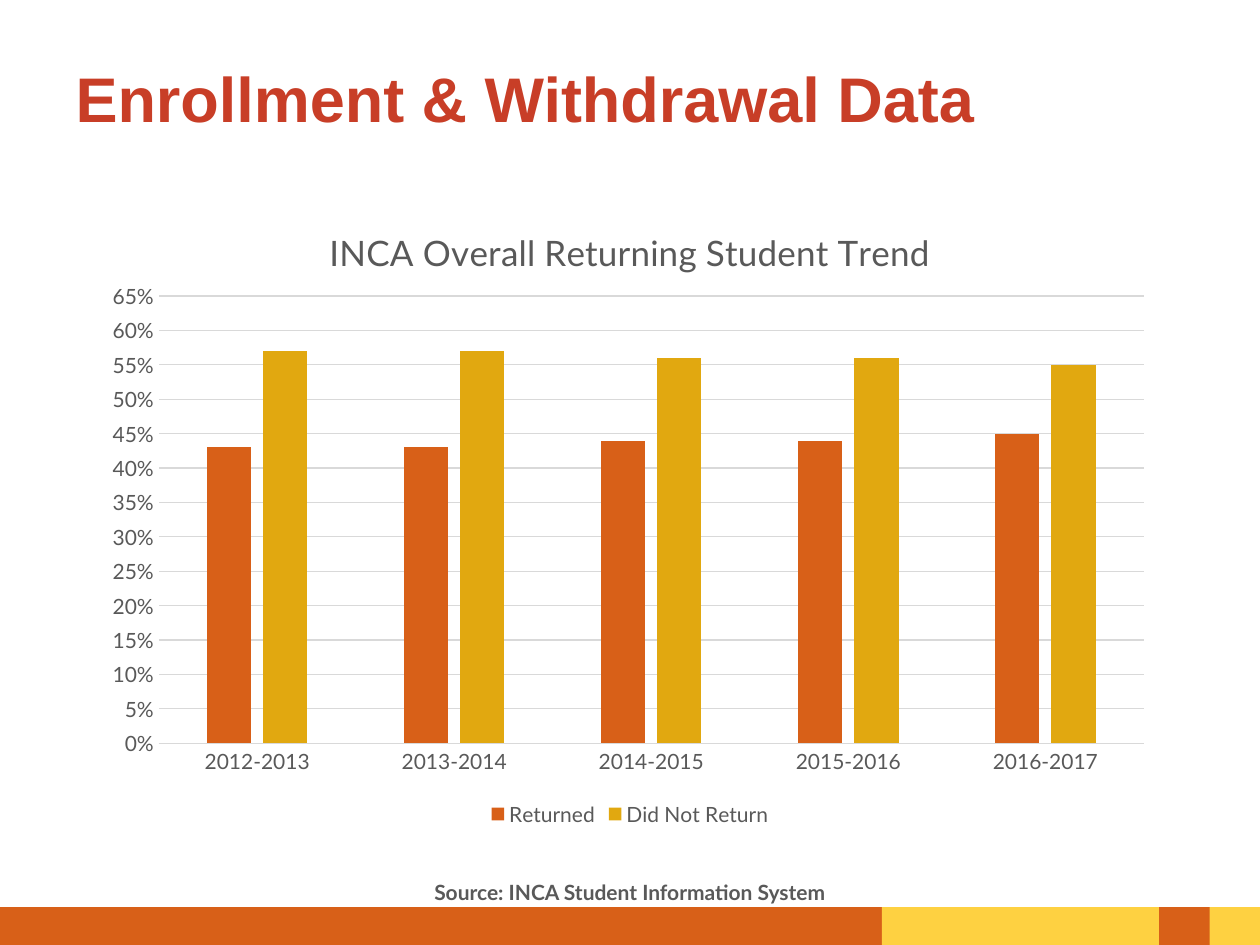
from pptx import Presentation
from pptx.chart.data import CategoryChartData
from pptx.dml.color import RGBColor
from pptx.enum.chart import XL_CHART_TYPE, XL_LEGEND_POSITION, XL_TICK_MARK
from pptx.enum.shapes import MSO_SHAPE
from pptx.enum.text import MSO_ANCHOR, MSO_AUTO_SIZE, PP_ALIGN
from pptx.oxml import parse_xml
from pptx.oxml.ns import nsdecls
from pptx.util import Inches, Pt

COLORS = {"orange": "D86018", "yellow": "FED141", "gold": "E1A810",
          "red": "C83E27", "text": "595959", "line": "D9D9D9"}
TITLE = "Enrollment & Withdrawal Data"
CHART_TITLE = "INCA Overall Returning Student Trend"
SOURCE = "Source: INCA Student Information System"
YEARS = ["2012-2013", "2013-2014", "2014-2015", "2015-2016", "2016-2017"]
SERIES = [
    ("Returned", [0.43, 0.43, 0.44, 0.44, 0.45], "orange"),
    ("Did Not Return", [0.57, 0.57, 0.56, 0.56, 0.55], "gold"),
]
BANDS = [(0, 7, "orange"), (7, 3, "yellow"), (9.2, 0.4, "orange")]
PLOT = {"x": 0.06, "y": 0.15, "w": 0.92, "h": 0.71}


def rgb(name):
    return RGBColor.from_string(COLORS[name])


def set_font(font, size=12, color="text", name="Lato", bold=False):
    font.size = Pt(size)
    font.name = name
    font.bold = bold
    font.color.rgb = rgb(color)


def set_text(tf, text, align=PP_ALIGN.LEFT, anchor=MSO_ANCHOR.MIDDLE, pad=0, **fmt):
    tf.word_wrap = True
    tf.auto_size = MSO_AUTO_SIZE.NONE
    tf.vertical_anchor = anchor
    tf.margin_left = tf.margin_right = Inches(0.1)
    tf.margin_top = tf.margin_bottom = Inches(pad)
    p = tf.paragraphs[0]
    p.alignment = align
    r = p.add_run()
    r.text = text
    set_font(r.font, **fmt)


def set_line(line, color):
    line.color.rgb = rgb(color)
    line.width = Pt(0.75)


def add_bands(s):
    for left, width, color in BANDS:
        sp = s.shapes.add_shape(MSO_SHAPE.RECTANGLE, Inches(left), Inches(7.2),
                                Inches(width), Inches(0.3))
        sp.shadow.inherit = False
        sp.fill.solid()
        sp.fill.fore_color.rgb = rgb(color)
        sp.line.fill.background()


def add_trend_chart(s):
    data = CategoryChartData(number_format="0%")
    data.categories = YEARS
    for name, values, color in SERIES:
        data.add_series(name, values)
    chart = s.shapes.add_chart(XL_CHART_TYPE.COLUMN_CLUSTERED, Inches(0.75), Inches(1.6),
                               Inches(8.5), Inches(5), data).chart
    set_font(chart.font)
    chart.has_title = True
    p = chart.chart_title.text_frame.paragraphs[0]
    r = p.add_run()
    r.text = CHART_TITLE
    set_font(r.font, size=20)
    chart.chart_title.include_in_layout = False

    chart.has_legend = True
    chart.legend.position = XL_LEGEND_POSITION.BOTTOM
    chart.legend.include_in_layout = False
    set_font(chart.legend.font)

    plot = chart.plots[0]
    plot.gap_width = 219
    plot.overlap = -27
    plot.vary_by_categories = False
    for series, (name, values, color) in zip(plot.series, SERIES):
        series.format.fill.solid()
        series.format.fill.fore_color.rgb = rgb(color)

    for axis in (chart.category_axis, chart.value_axis):
        axis.major_tick_mark = axis.minor_tick_mark = XL_TICK_MARK.NONE
        set_font(axis.tick_labels.font)
    set_line(chart.category_axis.format.line, "line")
    axis = chart.value_axis
    axis.minimum_scale = 0
    axis.maximum_scale = 0.65
    axis.major_unit = 0.05
    axis.tick_labels.number_format = "0%"
    axis.tick_labels.number_format_is_linked = False
    axis.format.line.fill.background()
    set_line(axis.major_gridlines.format.line, "line")

    area = chart.element.chart.plotArea
    for old in area.xpath("c:layout"):
        area.remove(old)
    modes = '<c:xMode val="edge"/><c:yMode val="edge"/>'
    sizes = "".join(f'<c:{key} val="{value}"/>' for key, value in PLOT.items())
    area.insert(0, parse_xml(
        f'<c:layout {nsdecls("c")}><c:manualLayout><c:layoutTarget val="inner"/>'
        f'{modes}{sizes}</c:manualLayout></c:layout>'))


def main():
    prs = Presentation()
    prs.slide_width = Inches(10)
    prs.slide_height = Inches(7.5)
    s = prs.slides.add_slide(prs.slide_layouts[5])
    add_bands(s)

    title = s.shapes.title
    title.left, title.top = Inches(0.5), Inches(0.25)
    title.width, title.height = Inches(8.5), Inches(1.05)
    set_text(title.text_frame, TITLE, size=36, color="red", name="Arial", bold=True)

    add_trend_chart(s)
    source = s.shapes.add_textbox(Inches(0.75), Inches(6.9), Inches(8.5), Inches(0.3))
    set_text(source.text_frame, SOURCE, align=PP_ALIGN.CENTER,
             anchor=MSO_ANCHOR.BOTTOM, pad=0.02, bold=True)
    prs.save("out.pptx")


if __name__ == "__main__":
    main()
